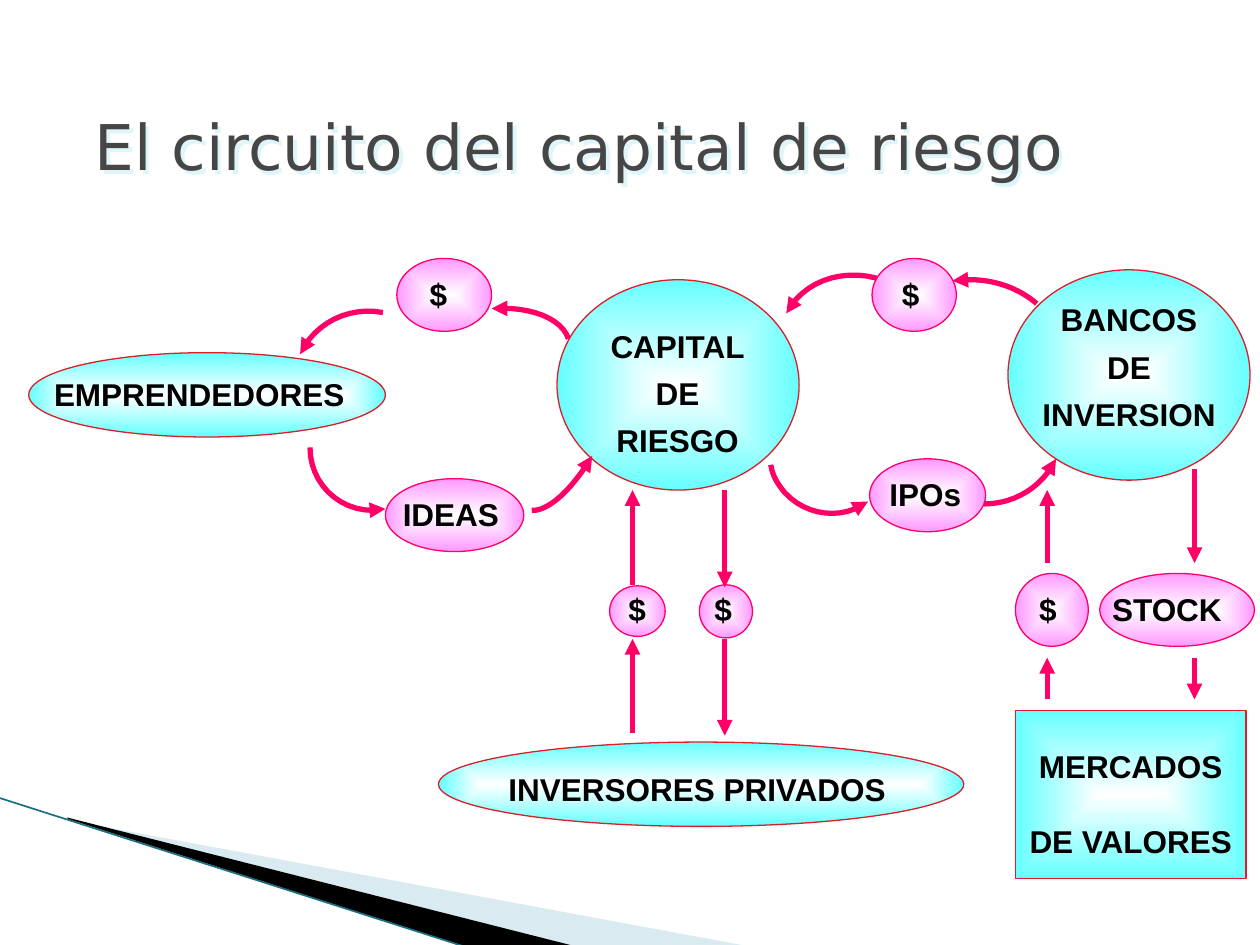
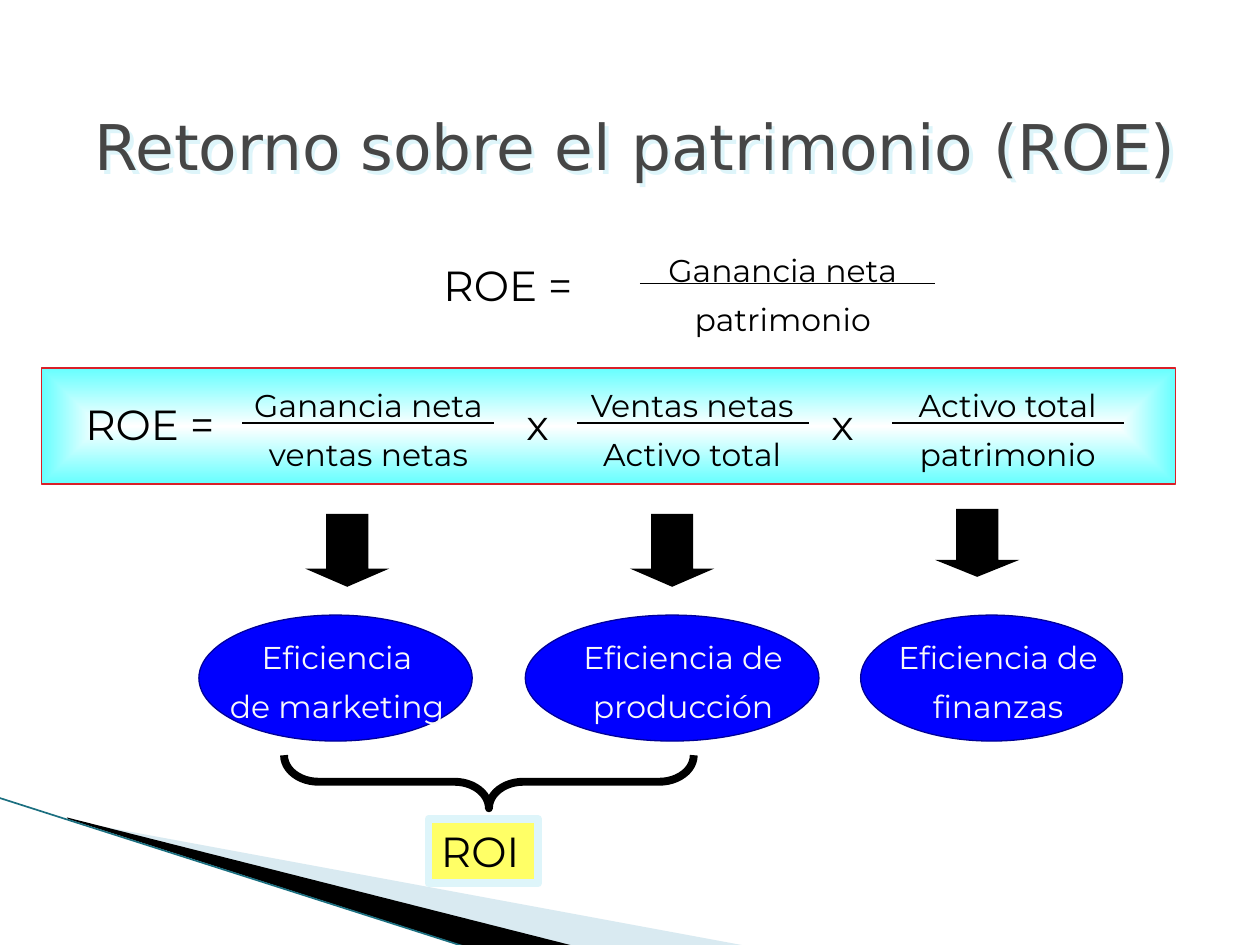
from dataclasses import dataclass

import lxml.etree
import pptx
import pptx.dml.color
import pptx.enum.shapes
import pptx.enum.text
import pptx.oxml.ns
import pptx.util

Cm = pptx.util.Cm
Pt = pptx.util.Pt
qn = pptx.oxml.ns.qn
Shape = pptx.enum.shapes.MSO_SHAPE
Align = pptx.enum.text.PP_ALIGN
Point = tuple[float, float]
Frame = tuple[float, float, float, float]

BLACK, WHITE, CYAN, PINK = "000000", "FFFFFF", "66FFFF", "FF99FF"
RED, MAGENTA, BLUE, NAVY = "DA1F28", "FF0066", "0000FF", "000099"
PALE, YELLOW, TITLE_GREY = "F8F8F8", "FFFF66", "464646"
ICE, BAND_BLUE, BAND_LINE = "DEF5FA", "A0CBDC", "1B6F80"


@dataclass
class Node:
    """A glowing shape with its own label; all lengths in cm."""
    text: str
    frame: Frame
    label: Frame
    kind: Shape = Shape.OVAL
    glow: str = CYAN
    edge: str = RED
    spacing: float | None = None


@dataclass
class Ratio:
    """Numerator over denominator, with the bar from bar_left to bar_right."""
    text: str
    left: float
    top: float
    width: float
    bar_left: float
    bar_right: float
    bar_top: float


@dataclass
class Efficiency:
    text: str
    left: float
    width: float
    label_left: float
    label_width: float
    wrap: bool
    arrow: Frame


def pink(text: str, frame: Frame, label: Frame) -> Node:
    return Node(text, frame, label, glow=PINK, edge=MAGENTA)


NODES = [
    Node("EMPRENDEDORES", (0.58, 7.11, 7.19, 1.7), (0.84, 7.44, 6.43, 1.02)),
    Node("CAPITAL\nDE\nRIESGO", (11.23, 5.64, 4.88, 4.24),
         (11.02, 6.27, 5.28, 3.12), spacing=1.25),
    Node("BANCOS\nDE\nINVERSION", (20.32, 5.44, 4.88, 4.24),
         (20.12, 5.74, 5.28, 3.12), spacing=1.25),
    Node("INVERSORES PRIVADOS", (8.84, 14.96, 10.59, 1.7), (10, 15.39, 8.15, 1.02)),
    Node("MERCADOS DE VALORES", (20.47, 14.33, 4.65, 3.38),
         (20.47, 14.17, 4.65, 3.1), kind=Shape.RECTANGLE, spacing=2),
    pink("$", (8, 5.21, 1.91, 1.47), (8.41, 5.41, 0.86, 1.02)),
    pink("IDEAS", (7.77, 9.65, 2.79, 1.47), (7.87, 9.86, 2.46, 1.02)),
    pink("$", (17.58, 5.21, 1.7, 1.47), (17.93, 5.41, 0.86, 1.02)),
    pink("IPOs", (17.53, 9.25, 2.34, 1.47), (17.68, 9.45, 1.96, 1.02)),
    pink("$", (12.29, 11.81, 1.12, 1.02), (12.42, 11.76, 0.86, 1.02)),
    pink("$", (14.1, 11.79, 1.07, 1.07), (14.15, 11.76, 0.86, 1.02)),
    pink("STOCK", (22.17, 11.56, 3.12, 1.47), (22.17, 11.76, 2.74, 1.02)),
    pink("$", (20.47, 11.56, 1.47, 1.47), (20.7, 11.76, 0.86, 1.02)),
]

# Chains of cubic curves: a start, then two handles and an end per piece.
FLOW_CURVES = [
    [(7.72, 6.3), (7.04, 6.17), (6.35, 6.5), (6.05, 7.14)],
    [(11.46, 6.83), (11.33, 6.43), (10.72, 6.17), (9.91, 6.22)],
    [(6.25, 9.02), (6.25, 9.73), (6.81, 10.29), (7.52, 10.29),
     (7.6, 10.29), (7.7, 10.29), (7.77, 10.26)],
    [(10.72, 10.29), (11.05, 10.31), (11.53, 9.88), (11.94, 9.19)],
    [(17.68, 5.61), (16.94, 5.41), (16.18, 5.69), (15.85, 6.32)],
    [(20.9, 6.12), (20.55, 5.82), (20.07, 5.64), (19.56, 5.64),
     (19.46, 5.64), (19.33, 5.64), (19.2, 5.66)],
    [(15.54, 9.37), (15.57, 9.58), (15.67, 9.75), (15.82, 9.93),
     (16.26, 10.41), (16.99, 10.49), (17.5, 10.11)],
    [(19.84, 10.16), (20.47, 10.16), (21.03, 9.8), (21.29, 9.25)],
]

# Column, then the start and end heights of each vertical arrow.
FLOW_ARROWS = [
    (12.75, 11.79, 9.88), (12.75, 14.78, 12.88),
    (14.61, 9.88, 11.84), (14.61, 12.88, 14.83),
    (24.08, 9.45, 11.35), (24.08, 13.26, 14.1),
    (21.11, 14.1, 13.26), (21.11, 11.35, 9.88),
]

RATIOS = [
    Ratio("Ganancia neta\npatrimonio", 13, 4.7, 5.56, 12.9, 18.85, 5.72),
    Ratio("Ganancia neta\nventas netas", 4.65, 7.42, 5.56, 4.88, 9.96, 8.53),
    Ratio("Ventas netas\nActivo total", 11.4, 7.42, 5.11, 11.63, 16.31, 8.53),
    Ratio("Activo total\npatrimonio", 18.03, 7.42, 4.57, 17.98, 22.66, 8.53),
]

FORMULA_SIGNS = [
    ("ROE =", (8.69, 5.11, 3.33, 1.27)),
    ("ROE =", (1.47, 7.9, 3.33, 1.27)),
    ("x", (10.36, 7.9, 1.07, 1.27)),
    ("x", (16.51, 7.9, 1.07, 1.27)),
]

EFFICIENCIES = [
    Efficiency("Eficiencia\nde marketing", 4.01, 5.51, 4.24, 5.11, False,
               (6.15, 10.36, 1.7, 1.47)),
    Efficiency("Eficiencia de producción", 10.59, 5.92, 11.23, 5.08, True,
               (12.7, 10.36, 1.7, 1.47)),
    Efficiency("Eficiencia de finanzas", 17.35, 5.28, 17.58, 5.08, True,
               (18.85, 10.26, 1.7, 1.37)),
]


def color(value: str) -> pptx.dml.color.RGBColor:
    return pptx.dml.color.RGBColor.from_string(value)


def lengths(values) -> list:
    return [Cm(value) for value in values]


def paint(shape, fill: str | None = None, edge: str | None = None,
          width: float = 0.75) -> None:
    """Set fill and outline (None for neither) and drop the shadow."""
    if fill:
        shape.fill.solid()
        shape.fill.fore_color.rgb = color(fill)
    else:
        shape.fill.background()
    if edge:
        shape.line.color.rgb = color(edge)
        shape.line.width = Pt(width)
    else:
        shape.line.fill.background()
    shape.shadow.inherit = False


def add_figure(page, kind: Shape, frame: Frame, **look):
    shape = page.shapes.add_shape(kind, *lengths(frame))
    paint(shape, **look)
    return shape


def glow_from_center(shape, outer: str) -> None:
    shape.fill.gradient()
    for stop, value, position in zip(shape.fill.gradient_stops, (WHITE, outer), (0, 1)):
        stop.color.rgb = color(value)
        stop.position = position
    gradient = shape.element.spPr.find(qn("a:gradFill"))
    gradient.remove(gradient.find(qn("a:lin")))
    rings = lxml.etree.SubElement(gradient, qn("a:path"), path="shape")
    lxml.etree.SubElement(rings, qn("a:fillToRect"),
                          dict.fromkeys("ltrb", "50000"))


def add_arrowhead(shape) -> None:
    outline = shape.element.spPr.find(qn("a:ln"))
    lxml.etree.SubElement(outline, qn("a:tailEnd"), type="triangle")


def add_line(page, start: Point, end: Point, ink: str, width: float = 0.75,
             arrow: bool = False) -> None:
    line = page.shapes.add_connector(pptx.enum.shapes.MSO_CONNECTOR.STRAIGHT,
                                     *lengths(start + end))
    line.line.color.rgb = color(ink)
    line.line.width = Pt(width)
    if arrow:
        add_arrowhead(line)
    lxml.etree.SubElement(line.element.spPr, qn("a:effectLst"))


def add_outline(page, points: list[Point], close: bool, **look):
    builder = page.shapes.build_freeform(*lengths(points[0]))
    builder.add_line_segments([lengths(point) for point in points[1:]], close=close)
    shape = builder.convert_to_shape()
    paint(shape, **look)
    return shape


def trace_curve(knots: list[Point], steps: int = 12) -> list[Point]:
    """Points along a chain of cubic curves."""
    points = [knots[0]]
    for first in range(0, len(knots) - 1, 3):
        piece = knots[first:first + 4]
        for step in range(1, steps + 1):
            t = step / steps
            weights = ((1 - t) ** 3, 3 * t * (1 - t) ** 2, 3 * t * t * (1 - t), t ** 3)
            points.append(tuple(sum(weight * knot[axis] for weight, knot in zip(weights, piece))
                                for axis in (0, 1)))
    return points


def add_text(page, text: str, frame: Frame, size: float = 18, font: str = "Montserrat",
             ink: str = BLACK, bold: bool = False, align: Align = Align.LEFT,
             spacing: float | None = None, wrap: bool = False):
    """Text box with one paragraph per line of text."""
    box = page.shapes.add_textbox(*lengths(frame))
    box.text_frame.text = text
    box.text_frame.word_wrap = wrap
    box.text_frame.auto_size = pptx.enum.text.MSO_AUTO_SIZE.SHAPE_TO_FIT_TEXT
    for para in box.text_frame.paragraphs:
        para.alignment = align
        para.line_spacing = spacing
        for span in para.runs:
            span.font.size = Pt(size)
            span.font.name = font
            span.font.bold = bold
            span.font.color.rgb = color(ink)
    return box


def add_page(deck, heading: str):
    """Page with the corner band and the styled title."""
    page = deck.slides.add_slide(deck.slide_layouts.get_by_name("Title Only"))
    pale_band = add_outline(page, [(1.4, 16.54), (15.11, 19.08), (11.58, 19.08), (1.4, 16.51)],
                            True, fill=BAND_BLUE)
    tint = pale_band.element.spPr.find(qn("a:solidFill")).find(qn("a:srgbClr"))
    lxml.etree.SubElement(tint, qn("a:alpha"), val="40000")
    add_outline(page, [(1.35, 16.48), (11.61, 19.08), (9.45, 19.1), (1.37, 16.51)],
                True, fill=BLACK)
    add_line(page, (-0.03, 16.08), (9.42, 19.1), BAND_LINE, 0.95)

    title = page.shapes.title
    title.left, title.top, title.width, title.height = lengths((1.65, 0.74, 23.11, 3.07))
    title.text_frame.text = heading
    title.text_frame.auto_size = pptx.enum.text.MSO_AUTO_SIZE.NONE
    title.text_frame.vertical_anchor = pptx.enum.text.MSO_ANCHOR.BOTTOM
    para = title.text_frame.paragraphs[0]
    para.alignment = Align.LEFT
    para.line_spacing = 0.8
    span = para.runs[0]
    span.font.size = Pt(36)
    span.font.name = "DejaVu Sans"
    span.font.color.rgb = color(TITLE_GREY)

    title.shadow.inherit = False
    effects = title.element.spPr.find(qn("a:effectLst"))
    shadow = lxml.etree.SubElement(effects, qn("a:outerShdw"), dist=str(Pt(3)), dir="2700000")
    lxml.etree.SubElement(shadow, qn("a:srgbClr"), val=ICE)
    return page


def build_circuit(deck) -> None:
    page = add_page(deck, "El circuito del capital de riesgo")
    for node in NODES:
        shape = add_figure(page, node.kind, node.frame, edge=node.edge)
        glow_from_center(shape, node.glow)
        centered = node.spacing is not None
        add_text(page, node.text, node.label, font="Arial", bold=True, wrap=centered,
                 align=Align.CENTER if centered else Align.LEFT, spacing=node.spacing)
    for knots in FLOW_CURVES:
        add_arrowhead(add_outline(page, trace_curve(knots), False, edge=MAGENTA, width=3))
    for column, start, end in FLOW_ARROWS:
        add_line(page, (column, start), (column, end), MAGENTA, 3, arrow=True)


def build_roe(deck) -> None:
    page = add_page(deck, "Retorno sobre el patrimonio (ROE)")
    panel = add_figure(page, Shape.RECTANGLE, (0.84, 7.42, 22.86, 2.34), edge=RED)
    glow_from_center(panel, CYAN)
    for text, frame in FORMULA_SIGNS:
        add_text(page, text, frame, size=24)
    for ratio in RATIOS:
        add_text(page, ratio.text, (ratio.left, ratio.top, ratio.width, 2.24),
                 align=Align.CENTER, spacing=1.3)
        add_line(page, (ratio.bar_left, ratio.bar_top), (ratio.bar_right, ratio.bar_top), BLACK)
    for item in EFFICIENCIES:
        add_figure(page, Shape.DOWN_ARROW, item.arrow, fill=BLACK).adjustments[1] = 0.25
        add_figure(page, Shape.OVAL, (item.left, 12.4, item.width, 2.54), fill=BLUE, edge=NAVY)
        add_text(page, item.text, (item.label_left, 12.5, item.label_width, 2.24), ink=PALE,
                 align=Align.CENTER, spacing=1.3, wrap=item.wrap)
    brace = add_figure(page, Shape.RIGHT_BRACE, (9.32, 11.63, 1.07, 8.26), edge=BLACK, width=4.5)
    brace.adjustments[0] = 0.65
    brace.rotation = 90
    result = add_text(page, "ROI", (8.64, 16.51, 2.21, 1.3), size=24)
    paint(result, fill=YELLOW, edge=ICE, width=4.5)


def main() -> None:
    deck = pptx.Presentation()
    deck.slide_width, deck.slide_height = Cm(25.4), Cm(19.05)
    build_circuit(deck)
    build_roe(deck)
    deck.save("out.pptx")


if __name__ == "__main__":
    main()
